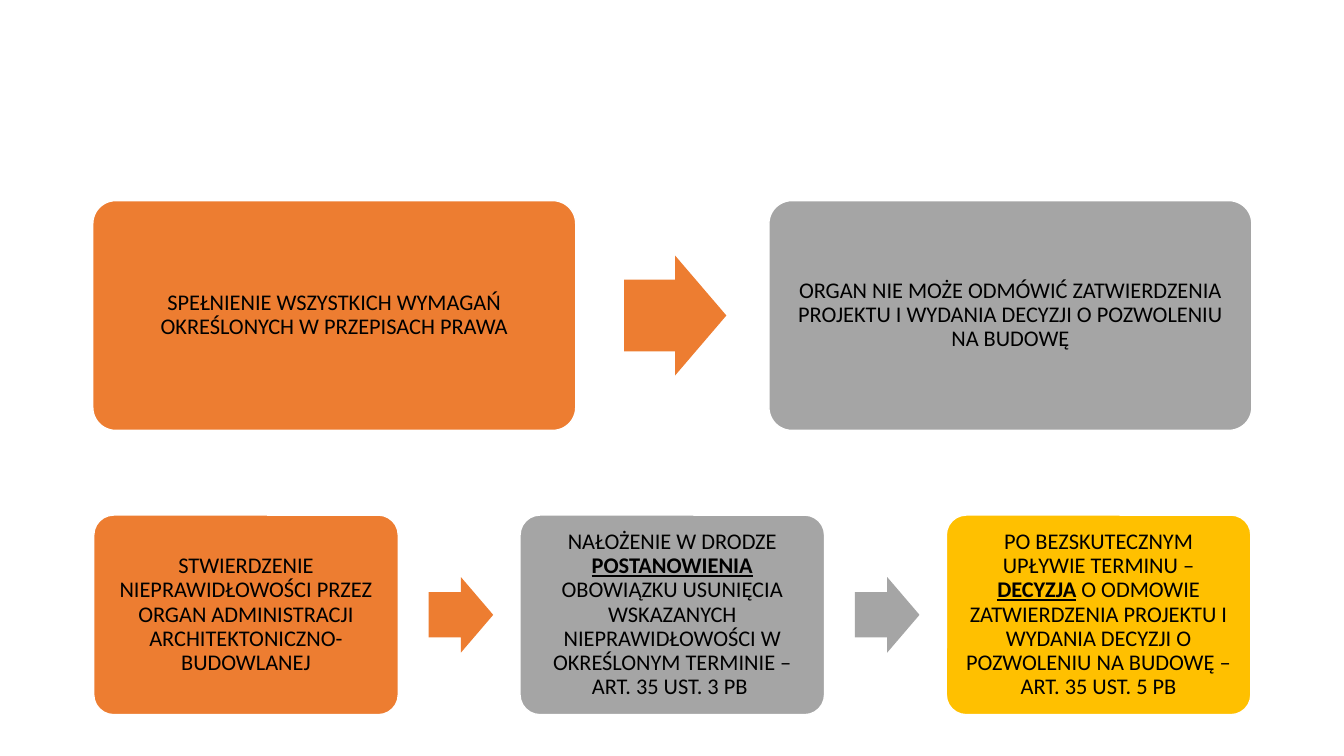
from dataclasses import dataclass

from pptx import Presentation
from pptx.dml.color import RGBColor
from pptx.enum.shapes import MSO_SHAPE as SHAPE
from pptx.enum.text import MSO_ANCHOR as ANCHOR, PP_ALIGN as ALIGN
from pptx.util import Inches, Pt


@dataclass(frozen=True)
class Theme:
    orange: str = "ED7D31"
    gray: str = "A5A5A5"
    gold: str = "FFC000"
    outline: str = "FFFFFF"
    text: str = "000000"
    font: str = "Calibri"
    size: int = 16
    inset: float = 0.13


class ProcessSlide:
    def __init__(self, prs, theme):
        self.theme = theme
        self.slide = prs.slides.add_slide(prs.slide_layouts[6])

    def shape(self, group, kind, x, y, w, h, color, adjustments):
        sp = group.shapes.add_shape(kind, Inches(x), Inches(y), Inches(w), Inches(h))
        sp.shadow.inherit = False
        sp.fill.solid()
        sp.fill.fore_color.rgb = RGBColor.from_string(color)
        for i, value in enumerate(adjustments):
            sp.adjustments[i] = value
        return sp

    def box(self, group, x, y, w, h, color, text):
        """Add a rounded box; text between asterisks is bold and underlined."""
        t = self.theme
        sp = self.shape(group, SHAPE.ROUNDED_RECTANGLE, x, y, w, h, color, [0.1])
        sp.line.color.rgb = RGBColor.from_string(t.outline)
        sp.line.width = Pt(1)
        tf = sp.text_frame
        tf.word_wrap = True
        tf.vertical_anchor = ANCHOR.MIDDLE
        tf.margin_left = tf.margin_right = Inches(t.inset)
        tf.margin_top = tf.margin_bottom = Inches(t.inset)
        p = tf.paragraphs[0]
        p.alignment = ALIGN.CENTER
        p.line_spacing = 0.9
        for i, part in enumerate(text.split("*")):
            r = p.add_run()
            r.text = part
            r.font.name = t.font
            r.font.size = Pt(t.size)
            r.font.color.rgb = RGBColor.from_string(t.text)
            r.font.bold = r.font.underline = i % 2 == 1

    def arrow(self, group, x, middle, w, h, color):
        sp = self.shape(group, SHAPE.RIGHT_ARROW, x, middle - h / 2, w, h, color, [0.6, 0.5])
        sp.line.fill.background()

    def process(self, x, y, w, h, steps):
        """Add a row of boxes joined by arrows, all spaced in proportion to box width."""
        group = self.slide.shapes.add_group_shape()
        for i, (color, text) in enumerate(steps):
            left = x + i * 1.4 * w
            self.box(group, left, y, w, h, color, text)
            if i < len(steps) - 1:
                self.arrow(group, left + 1.1 * w, y + h / 2, 0.212 * w, 0.248 * w, color)


def main():
    prs = Presentation()
    prs.slide_width, prs.slide_height = Inches(13.33), Inches(7.5)
    theme = Theme()
    s = ProcessSlide(prs, theme)
    s.process(0.93, 5.11, 3.02, 1.98, [
        (theme.orange, "STWIERDZENIE NIEPRAWIDŁOWOŚCI PRZEZ ORGAN ADMINISTRACJI "
                       "ARCHITEKTONICZNO-BUDOWLANEJ"),
        (theme.gray, "NAŁOŻENIE W DRODZE *POSTANOWIENIA* OBOWIĄZKU USUNIĘCIA WSKAZANYCH "
                     "NIEPRAWIDŁOWOŚCI W OKREŚLONYM TERMINIE – ART. 35 UST. 3 PB "),
        (theme.gold, "PO BEZSKUTECZNYM UPŁYWIE TERMINU – *DECYZJA* O ODMOWIE ZATWIERDZENIA "
                     "PROJEKTU I WYDANIA DECYZJI O POZWOLENIU NA BUDOWĘ – ART. 35 UST. 5 PB"),
    ])
    s.process(0.92, 1.99, 4.79, 2.28, [
        (theme.orange, "SPEŁNIENIE WSZYSTKICH WYMAGAŃ OKREŚLONYCH W PRZEPISACH PRAWA"),
        (theme.gray, "ORGAN NIE MOŻE ODMÓWIĆ ZATWIERDZENIA PROJEKTU I WYDANIA DECYZJI "
                     "O POZWOLENIU NA BUDOWĘ"),
    ])
    prs.save("out.pptx")


if __name__ == "__main__":
    main()
